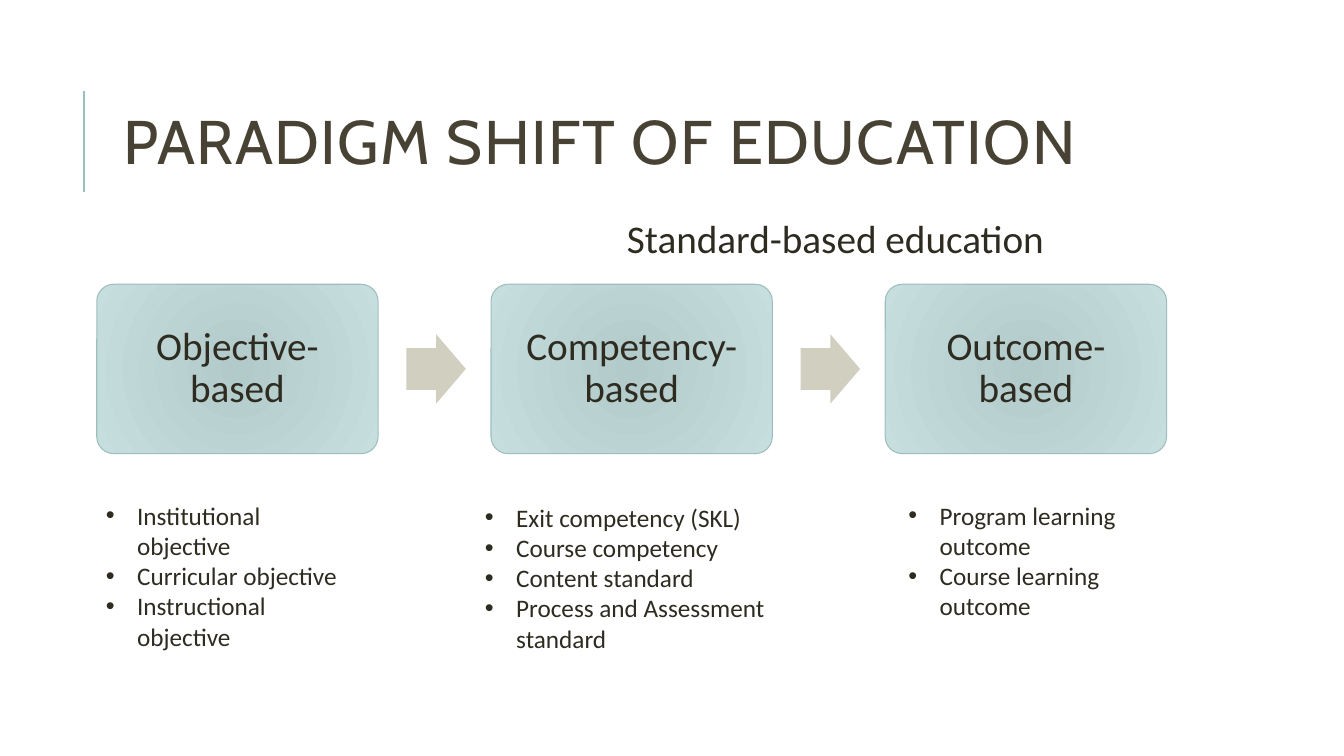
import pptx
import pptx.dml.color
import pptx.enum.shapes
import pptx.enum.text
import pptx.oxml
import pptx.oxml.ns
import pptx.util
from pptx.util import Inches, Pt

TITLE = "PARADIGM SHIFT OF EDUCATION"
CAPTION = "Standard-based education"
STAGES = [
    {"name": "Objective-based", "at": (0.95, 4.91, 2.67, 1.61),
     "points": ["Institutional objective", "Curricular objective", "Instructional objective"]},
    {"name": "Competency-based", "at": (4.71, 4.93, 3.1, 1.92),
     "points": ["Exit competency (SKL)", "Course competency", "Content standard",
                "Process and Assessment standard"]},
    {"name": "Outcome-based", "at": (8.91, 4.91, 2.67, 1.31),
     "points": ["Program learning outcome", "Course learning outcome"]},
]
COLORS = {"title": "474233", "text": "2E2B21", "rule": "9CBEBD", "arrow": "D1CFBF",
          "center": "B2CBCA", "edge": "C6DEDE"}
STAGE_LEFT, STAGE_TOP, STAGE_WIDTH, STAGE_HEIGHT, STAGE_PITCH = 0.96, 2.82, 2.79, 1.68, 3.91
ARROW_OFFSET, ARROW_WIDTH, ARROW_HEIGHT = 3.07, 0.59, 0.69
CAPTION_SLOT, LIST_SLOTS = 3, (2, 4, 1)
ALIGN = pptx.enum.text.PP_ALIGN
ANCHOR = pptx.enum.text.MSO_ANCHOR
SHAPES = pptx.enum.shapes.MSO_SHAPE
NS = pptx.oxml.ns.nsdecls("a")


def rgb(name):
    return pptx.dml.color.RGBColor.from_string(COLORS[name])


def place(part, box):
    part.left, part.top, part.width, part.height = map(Inches, box)


def write(paragraph, words, size, align, color="text", font="Calibri"):
    paragraph.alignment = align
    paragraph.space_before = Pt(0)
    run = paragraph.add_run()
    run.text = words
    run.font.size = Pt(size)
    run.font.name = font
    run.font.bold = False
    run.font.color.rgb = rgb(color)
    return run


def add_bullet(paragraph):
    properties = paragraph._p.get_or_add_pPr()
    properties.set("marL", str(Inches(0.31)))
    properties.set("indent", str(Inches(-0.31)))
    for tag in ('buFont {} typeface="Arial"', 'buChar {} char="•"'):
        properties.append(pptx.oxml.parse_xml("<a:" + tag.format(NS) + "/>"))


def fill_slot(slot, box, lines, size, align, bulleted):
    place(slot, box)
    frame = slot.text_frame
    frame.word_wrap = True
    frame.vertical_anchor = ANCHOR.TOP
    frame.auto_size = pptx.enum.text.MSO_AUTO_SIZE.SHAPE_TO_FIT_TEXT
    for number, line in enumerate(lines):
        paragraph = frame.add_paragraph() if number else frame.paragraphs[0]
        write(paragraph, line, size, align)
        if bulleted:
            add_bullet(paragraph)


def radial_fill(shape):
    stops = "".join(f'<a:gs pos="{position}"><a:srgbClr val="{COLORS[name]}"/></a:gs>'
                    for position, name in ((0, "center"), (100000, "edge")))
    gradient = pptx.oxml.parse_xml(
        f'<a:gradFill {NS} rotWithShape="1"><a:gsLst>{stops}</a:gsLst><a:path path="circle">'
        '<a:fillToRect l="100000" t="100000" r="100000" b="100000"/></a:path></a:gradFill>')
    shape._element.spPr.find(pptx.oxml.ns.qn("a:prstGeom")).addnext(gradient)


def add_stage(slide, left, name):
    stage = slide.shapes.add_shape(SHAPES.ROUNDED_RECTANGLE, Inches(left), Inches(STAGE_TOP),
                                   Inches(STAGE_WIDTH), Inches(STAGE_HEIGHT))
    stage.adjustments[0] = 0.1
    stage.shadow.inherit = False
    stage.line.color.rgb = rgb("rule")
    stage.line.width = Pt(0.75)
    radial_fill(stage)
    frame = stage.text_frame
    frame.word_wrap = True
    frame.vertical_anchor = ANCHOR.MIDDLE
    frame.margin_left = frame.margin_right = frame.margin_top = frame.margin_bottom = Inches(0.12)
    write(frame.paragraphs[0], name, 28, ALIGN.CENTER)
    frame.paragraphs[0].line_spacing = 0.9


def add_arrow(slide, left):
    top = STAGE_TOP + (STAGE_HEIGHT - ARROW_HEIGHT) / 2
    arrow = slide.shapes.add_shape(SHAPES.RIGHT_ARROW, Inches(left), Inches(top),
                                   Inches(ARROW_WIDTH), Inches(ARROW_HEIGHT))
    arrow.adjustments[0] = 0.6
    arrow.adjustments[1] = 0.5
    arrow.shadow.inherit = False
    arrow.fill.solid()
    arrow.fill.fore_color.rgb = rgb("arrow")
    arrow.line.fill.background()


def main():
    deck = pptx.Presentation()
    deck.slide_width, deck.slide_height = Inches(13.33), Inches(7.5)
    slide = deck.slides.add_slide(deck.slide_layouts.get_by_name("Comparison"))
    slots = {slot.placeholder_format.idx: slot for slot in slide.placeholders}

    rule = slide.shapes.add_connector(pptx.enum.shapes.MSO_CONNECTOR.STRAIGHT,
                                      Inches(0.83), Inches(1.9), Inches(0.83), Inches(0.9))
    rule.line.color.rgb = rgb("rule")
    rule.line.width = Pt(1.5)
    rule._element.spPr.append(pptx.oxml.parse_xml(f"<a:effectLst {NS}/>"))

    heading = slide.shapes.title
    place(heading, (1.12, 0.64, 10.63, 1.64))
    heading.text_frame.word_wrap = True
    heading.text_frame.vertical_anchor = ANCHOR.MIDDLE
    heading.text_frame.auto_size = pptx.enum.text.MSO_AUTO_SIZE.NONE
    heading_line = heading.text_frame.paragraphs[0]
    heading_run = write(heading_line, TITLE, 44, ALIGN.LEFT, "title", "Cabin")
    heading_run.font._element.set("spc", "100")
    heading_line.line_spacing = 0.8

    for number, stage in enumerate(STAGES):
        left = STAGE_LEFT + number * STAGE_PITCH
        add_stage(slide, left, stage["name"])
        if number < len(STAGES) - 1:
            add_arrow(slide, left + ARROW_OFFSET)
        fill_slot(slots[LIST_SLOTS[number]], stage["at"], stage["points"], 18, ALIGN.LEFT, True)

    fill_slot(slots[CAPTION_SLOT], (6.02, 2.08, 4.53, 0.57), [CAPTION], 28, ALIGN.CENTER, False)
    deck.save("out.pptx")


if __name__ == "__main__":
    main()
